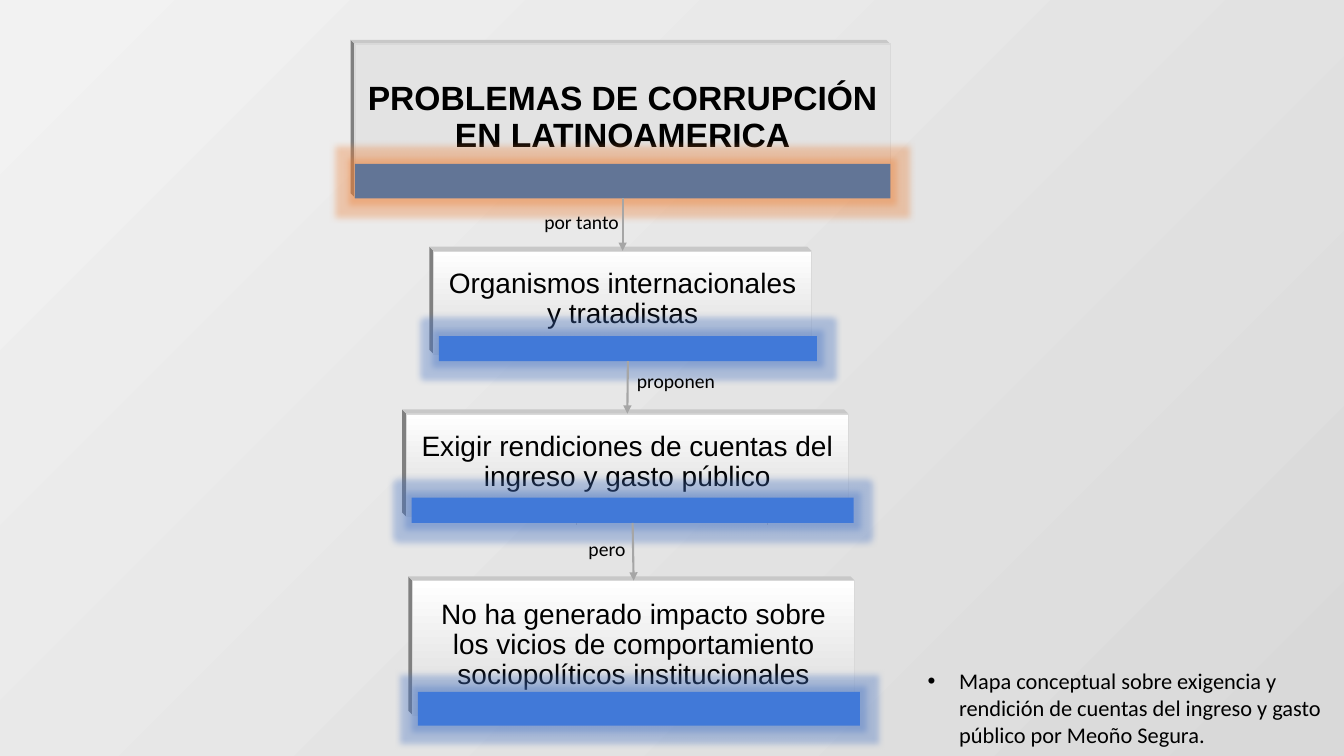
from lxml import etree
from pptx import Presentation
from pptx.dml.color import RGBColor
from pptx.enum.shapes import MSO_CONNECTOR, MSO_SHAPE
from pptx.enum.text import MSO_ANCHOR, PP_ALIGN
from pptx.oxml.ns import qn
from pptx.util import Emu, Pt

PX = 9525
RECT = MSO_SHAPE.RECTANGLE
STRAIGHT = MSO_CONNECTOR.STRAIGHT
CENTER = PP_ALIGN.CENTER
MIDDLE = MSO_ANCHOR.MIDDLE
TOP, BOTTOM = 0, 2


def px(*sizes):
    return [Emu(size * PX) for size in sizes]


def color(code):
    return RGBColor.from_string(code)


def add(parent, tag, **attrs):
    return etree.SubElement(parent, qn(tag), attrs)


class Board:
    ink = "000000"
    rim = "D9D9D9"
    arrow_ink = "A6A6A6"
    side, lid = "808080", "C8C8C8"
    depth = 4

    def __init__(self, slide):
        self.slide = slide
        self.shapes = slide.shapes

    def blend(self, fill, start, end, angle):
        fill.gradient()
        fill.gradient_angle = angle
        for stop, code in zip(fill.gradient_stops, (start, end)):
            stop.color.rgb = color(code)

    def put(self, frame, text, size, font, bold=False):
        """Fill the first paragraph of a frame with one run."""
        frame.word_wrap = True
        para = frame.paragraphs[0]
        run = para.add_run()
        run.text = text
        run.font.size = Pt(size)
        run.font.name = font
        run.font.bold = bold
        run.font.color.rgb = color(self.ink)
        return para

    def edge(self, points, code):
        build = self.shapes.build_freeform(*points[0], scale=PX)
        build.add_line_segments(points[1:])
        shape = build.convert_to_shape()
        shape.shadow.inherit = False
        shape.fill.solid()
        shape.fill.fore_color.rgb = color(code)
        shape.line.fill.background()

    def rims(self, x, y, w, h):
        """Draw the slanted left and top faces of a raised box."""
        d = self.depth
        self.edge([(x - d, y - d), (x, y), (x, y + h), (x - d, y + h - d)], self.side)
        self.edge([(x - d, y - d), (x + w - d, y - d), (x + w, y), (x, y)], self.lid)

    def box(self, x, y, w, h, text, size, pad, line, fill=None, bold=False):
        self.rims(x, y, w, h)
        shape = self.shapes.add_shape(RECT, *px(x, y, w, h))
        shape.shadow.inherit = False
        if fill:
            shape.fill.solid()
            shape.fill.fore_color.rgb = color(fill)
        else:
            self.blend(shape.fill, "FFFFFF", "D9D9D9", 270)
        shape.line.color.rgb = color(self.rim)
        shape.line.width = Pt(line)
        frame = shape.text_frame
        frame.vertical_anchor = MIDDLE
        frame.margin_left, frame.margin_top, frame.margin_right, frame.margin_bottom = px(
            pad, 1, pad, 6)
        para = self.put(frame, text, size, "Arial", bold)
        para.alignment = CENTER
        para.line_spacing = 0.9
        return shape

    def bar(self, x, y, w, h, fill, glow):
        shape = self.shapes.add_shape(RECT, *px(x, y, w, h))
        shape.shadow.inherit = False
        shape.fill.solid()
        shape.fill.fore_color.rgb = color(fill)
        shape.line.fill.background()
        effects = shape._element.spPr.find(qn("a:effectLst"))
        halo = add(effects, "a:glow", rad=str(12 * PX))
        tint = add(halo, "a:srgbClr", val=glow)
        add(tint, "a:alpha", val="35000")
        return shape

    def line(self, x1, y1, x2, y2, code, width):
        link = self.shapes.add_connector(STRAIGHT, *px(x1, y1, x2, y2))
        link.line.color.rgb = color(code)
        link.line.width = Pt(width)
        add(link._element.spPr, "a:effectLst")
        return link

    def arrow(self, upper, lower):
        link = self.line(0, 0, 0, 0, self.arrow_ink, 1.5)
        link.begin_connect(upper, BOTTOM)
        link.end_connect(lower, TOP)
        add(link._element.spPr.find(qn("a:ln")), "a:tailEnd", type="triangle")

    def label(self, x, y, w, h, text, size):
        frame = self.shapes.add_textbox(*px(x, y, w, h)).text_frame
        return self.put(frame, text, size, "Calibri")

    def bullet(self, x, y, w, h, text, size, indent):
        props = self.label(x, y, w, h, text, size)._p.get_or_add_pPr()
        props.set("marL", str(indent * PX))
        props.set("indent", str(-indent * PX))
        add(props, "a:buFont", typeface="Arial")
        add(props, "a:buChar", char="•")


STEPS = [
    (413, 239, 360, 98, 320, 24, "Organismos internacionales y tratadistas"),
    (387, 394, 421, 98, 474, 24, "Exigir rendiciones de cuentas del ingreso y gasto público"),
    (393, 553, 421, 128, 659, 32,
     "No ha generado impacto sobre los vicios de comportamiento "
     "sociopolíticos institucionales"),
]
LABELS = [(509, 195, "por tanto"), (597, 347, "proponen"), (551, 507, "pero")]


def main():
    deck = Presentation()
    deck.slide_width, deck.slide_height = px(1280, 720)
    slide = deck.slides.add_slide(deck.slide_layouts[6])
    board = Board(slide)
    board.blend(slide.background.fill, "D9D9D9", "F2F2F2", 135)

    for x in (549, 731):
        board.line(x, 468, x, 500, "BFBFBF", 0.25)

    board.box(338, 42, 510, 146, "PROBLEMAS DE CORRUPCIÓN EN LATINOAMERICA",
              24, 1, 1, fill="E3E3E3", bold=True)
    bars = [board.bar(338, 156, 510, 33, "627596", "ED7D31")]
    boxes = []
    for x, y, w, h, base, thick, text in STEPS:
        boxes.append(board.box(x, y, w, h, text, 20, 8, 0.25))
        bars.append(board.bar(x + 5, base, w, thick, "4179D8", "4472C4"))
    for upper, lower in zip(bars, boxes):
        board.arrow(upper, lower)

    for x, y, text in LABELS:
        board.label(x, y, 251, 33, text, 14)
    board.bullet(874, 631, 406, 87,
                 "Mapa conceptual sobre exigencia y rendición de cuentas del "
                 "ingreso y gasto público por Meoño Segura.", 16, 30)
    deck.save("out.pptx")


if __name__ == "__main__":
    main()
